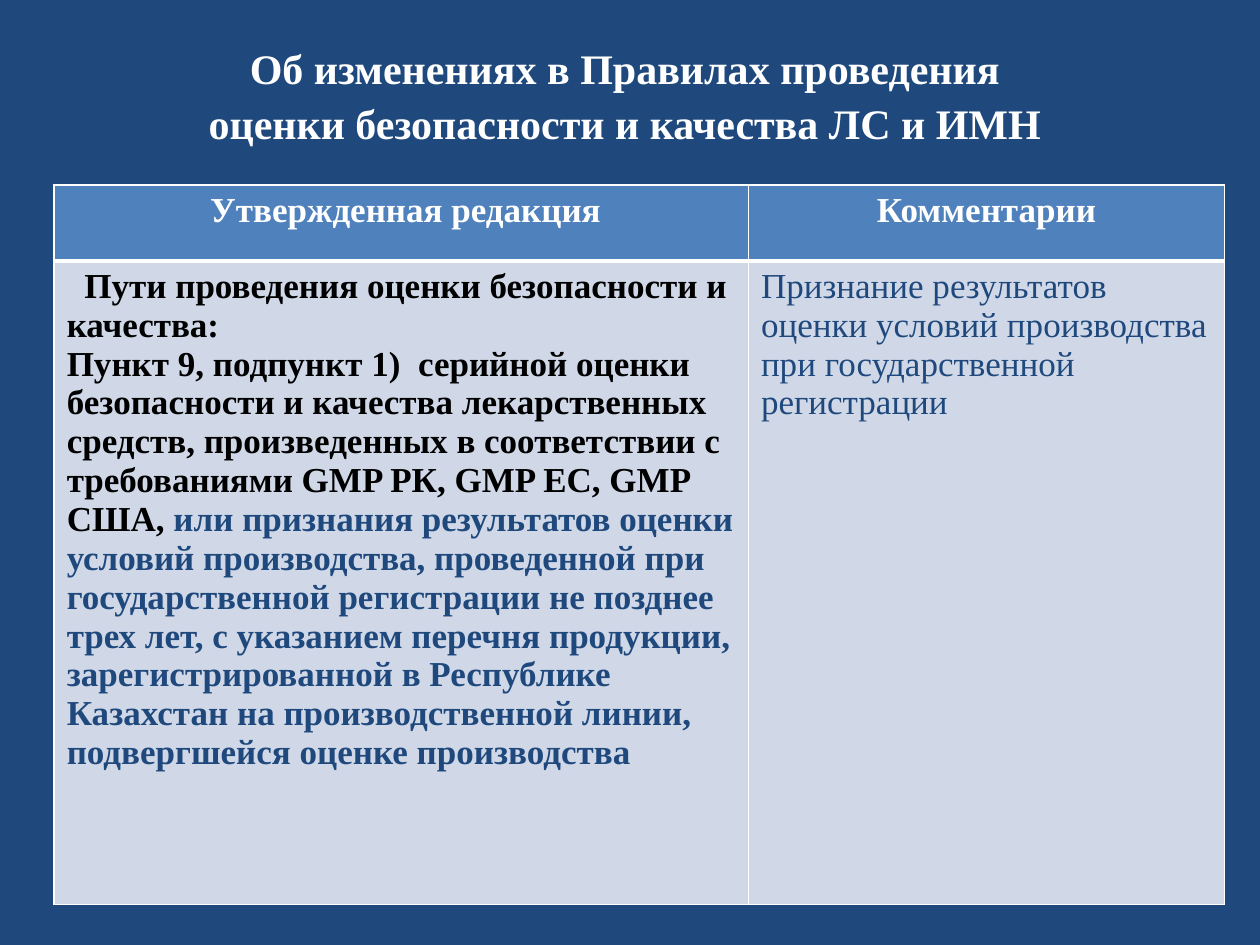
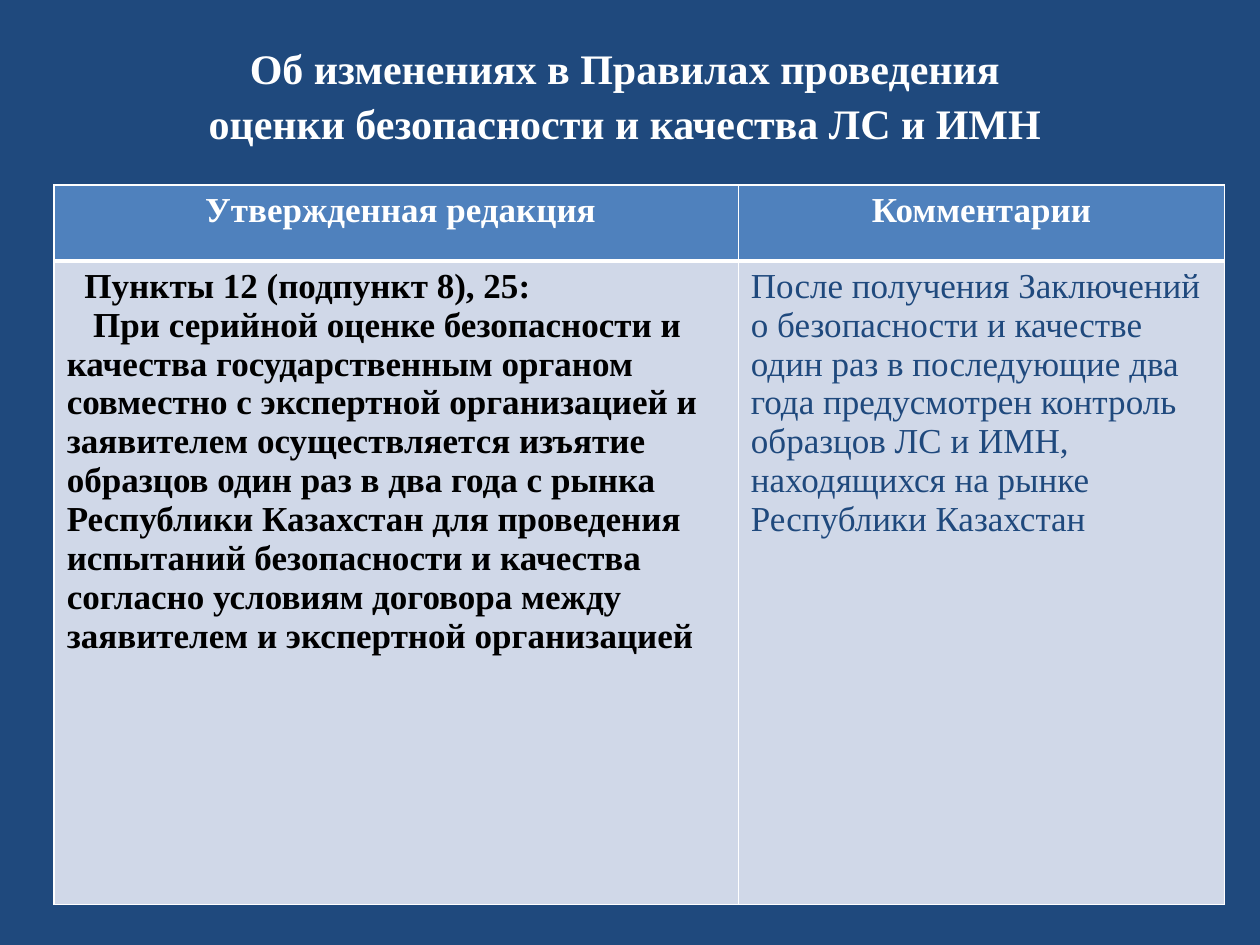
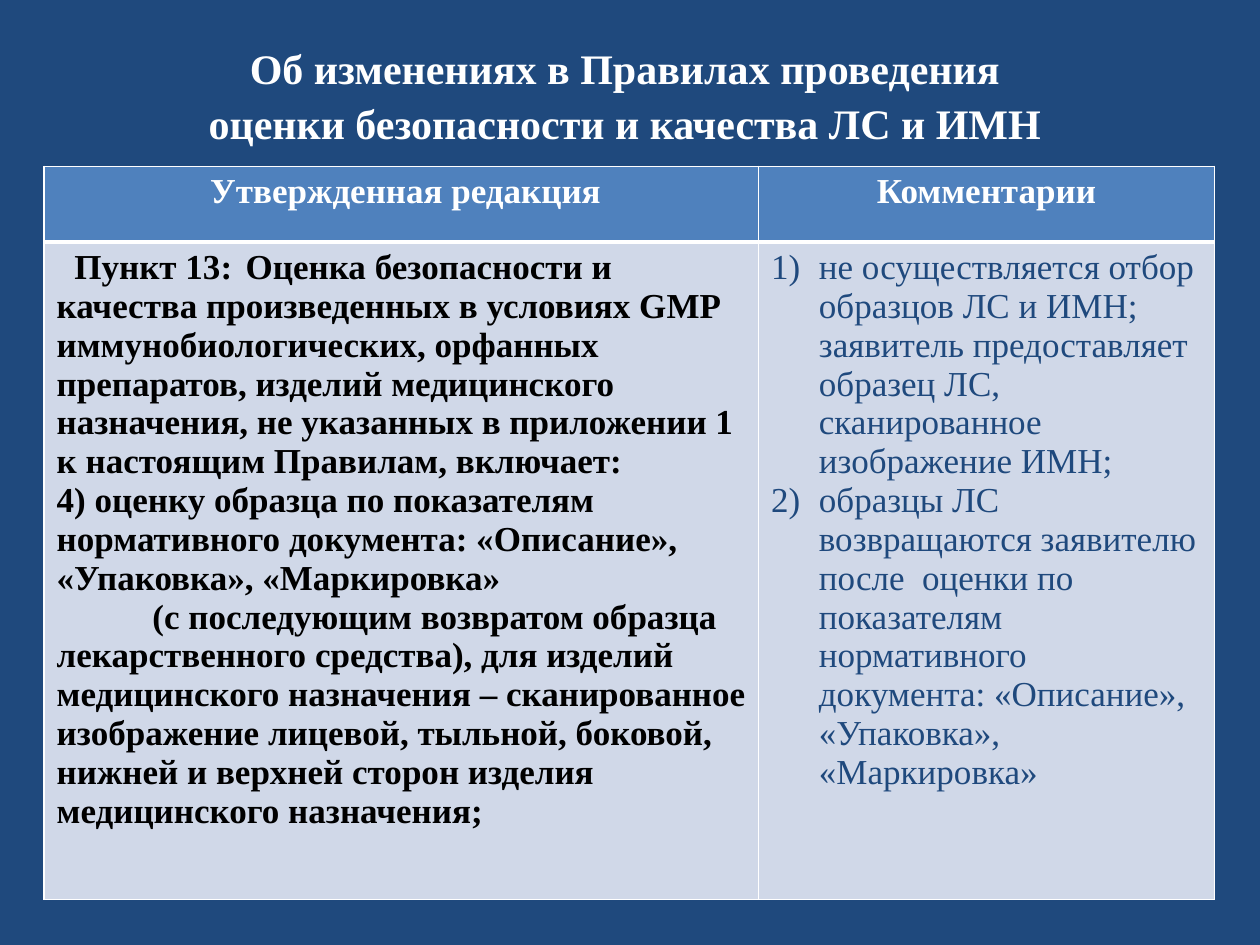
from dataclasses import dataclass

from lxml import etree
from pptx import Presentation
from pptx import util as u
from pptx.dml.color import RGBColor
from pptx.enum import text
from pptx.oxml.ns import qn


@dataclass(frozen=True)
class Theme:
    font: str = "Times New Roman"
    navy: str = "1F497D"
    blue: str = "4F81BD"
    pale: str = "D0D8E8"
    white: str = "FFFFFF"
    black: str = "000000"
    title_size: int = 24
    table_size: int = 20
    thin: int = 1
    thick: int = 3


@dataclass(frozen=True)
class Para:
    text: str
    added: str = ""
    indent: float = 0
    tab: float = 0
    numbered: bool = False


@dataclass(frozen=True)
class Revision:
    box: tuple
    first_col: float
    edition: tuple
    comments: tuple


T = Theme()
TITLE = "Об изменениях в Правилах проведения \nоценки безопасности и качества ЛС и ИМН "
TITLE_BOX = (0.12, 0.29, 9.76, 1.0)
HEADERS = (" Утвержденная редакция", "Комментарии")
HEADER_HEIGHT = 0.6
NUMBER_INDENT = 0.38

REVISIONS = (
    Revision(
        (0.43, 1.47, 9.29, 5.71), 5.51,
        (Para("Пути проведения оценки безопасности и качества:", indent=0.14),
         Para("Пункт 9, подпункт 1)  серийной оценки безопасности и качества "
              "лекарственных средств, произведенных в соответствии с требованиями "
              "GMP РК, GMP ЕС, GMP США, ",
              added="или признания результатов оценки условий производства, "
                    "проведенной при государственной регистрации не позднее трех лет, "
                    "с указанием перечня продукции, зарегистрированной в Республике "
                    "Казахстан на производственной линии, подвергшейся оценке "
                    "производства")),
        (Para("Признание результатов оценки условий производства при "
              "государственной регистрации"),),
    ),
    Revision(
        (0.43, 1.47, 9.29, 5.71), 5.43,
        (Para("Пункты 12 (подпункт 8), 25:", indent=0.14),
         Para("При серийной оценке безопасности и качества государственным органом "
              "совместно с экспертной организацией и заявителем осуществляется "
              "изъятие образцов один раз в два года с рынка Республики Казахстан "
              "для проведения испытаний безопасности и качества согласно условиям "
              "договора между заявителем и экспертной организацией", indent=0.21)),
        (Para("После получения Заключений о безопасности и качестве один раз в "
              "последующие два года предусмотрен контроль образцов ЛС и ИМН, "
              "находящихся на рынке Республики Казахстан"),),
    ),
    Revision(
        (0.35, 1.32, 9.29, 5.82), 5.67,
        (Para("Пункт 13:\tОценка безопасности и качества произведенных в условиях "
              "GMP иммунобиологических, орфанных препаратов, изделий медицинского "
              "назначения, не указанных в приложении 1 к настоящим Правилам, "
              "включает:", indent=0.14, tab=1.67),
         Para("4) оценку образца по показателям нормативного документа: «Описание», "
              "«Упаковка», «Маркировка»"),
         Para("(с последующим возвратом образца лекарственного средства), для "
              "изделий медицинского назначения – сканированное изображение лицевой, "
              "тыльной, боковой, нижней и верхней сторон изделия медицинского "
              "назначения;", indent=0.76)),
        (Para("не осуществляется отбор образцов ЛС и ИМН; заявитель предоставляет "
              "образец ЛС, сканированное изображение ИМН;", numbered=True),
         Para("образцы ЛС возвращаются заявителю после  оценки по показателям "
              "нормативного документа: «Описание», «Упаковка», «Маркировка»",
              numbered=True)),
    ),
)


def rgb(color):
    return RGBColor.from_string(color)


def style_run(r, size, color, bold=True):
    r.font.name = T.font
    r.font.size = u.Pt(size)
    r.font.color.rgb = rgb(color)
    r.font.bold = bold


def set_indent(p, para):
    pPr = p._p.get_or_add_pPr()
    if para.numbered:
        pPr.set("marL", str(u.Inches(NUMBER_INDENT)))
        pPr.set("indent", str(-u.Inches(NUMBER_INDENT)))
        etree.SubElement(pPr, qn("a:buAutoNum"), type="arabicParenR")
    elif para.indent:
        pPr.set("marL", "0")
        pPr.set("indent", str(u.Inches(para.indent)))
    if para.tab:
        tabs = etree.SubElement(pPr, qn("a:tabLst"))
        etree.SubElement(tabs, qn("a:tab"), pos=str(u.Inches(para.tab)), algn="l")


def style_cell(cell, fill, top, bottom):
    tcPr = cell._tc.get_or_add_tcPr()
    widths = {"lnL": T.thin, "lnR": T.thin, "lnT": top, "lnB": bottom}
    for side, width in widths.items():
        ln = etree.SubElement(tcPr, qn(f"a:{side}"), w=str(u.Pt(width)))
        solid = etree.SubElement(ln, qn("a:solidFill"))
        etree.SubElement(solid, qn("a:srgbClr"), val=T.white)
    cell.fill.solid()
    cell.fill.fore_color.rgb = rgb(fill)


def fill_header(cell, label):
    style_cell(cell, T.blue, T.thin, T.thick)
    p = cell.text_frame.paragraphs[0]
    p.text = label
    p.alignment = text.PP_ALIGN.CENTER
    style_run(p.runs[0], T.table_size, T.white)


def fill_body(cell, paras, color, bold):
    style_cell(cell, T.pale, T.thick, T.thin)
    tf = cell.text_frame
    tf.text = "\n".join(para.text for para in paras)
    for p, para in zip(tf.paragraphs, paras):
        set_indent(p, para)
        style_run(p.runs[0], T.table_size, color, bold)
        if para.added:
            r = p.add_run()
            r.text = para.added
            style_run(r, T.table_size, T.navy, bold)


def add_title(s, box):
    sp = s.shapes.title
    sp.left, sp.top, sp.width, sp.height = map(u.Inches, box)
    tf = sp.text_frame
    tf.text = TITLE
    tf.word_wrap = True
    tf.auto_size = text.MSO_AUTO_SIZE.NONE
    tf.vertical_anchor = text.MSO_ANCHOR.TOP
    for p in tf.paragraphs:
        p.alignment = text.PP_ALIGN.CENTER
        p.space_before = u.Pt(2.2)
        style_run(p.runs[0], T.title_size, T.white)


def add_revision_table(s, revision):
    width, height = revision.box[2:]
    tbl = s.shapes.add_table(2, 2, *map(u.Inches, revision.box)).table
    tbl.horz_banding = False
    for col, w in zip(tbl.columns, (revision.first_col, width - revision.first_col)):
        col.width = u.Inches(w)
    for row, h in zip(tbl.rows, (HEADER_HEIGHT, height - HEADER_HEIGHT)):
        row.height = u.Inches(h)
    for i, label in enumerate(HEADERS):
        fill_header(tbl.cell(0, i), label)
    fill_body(tbl.cell(1, 0), revision.edition, T.black, True)
    fill_body(tbl.cell(1, 1), revision.comments, T.navy, False)


def add_revision_slide(prs, revision):
    s = prs.slides.add_slide(prs.slide_layouts.get_by_name("Title Only"))
    add_title(s, TITLE_BOX)
    add_revision_table(s, revision)


def main():
    prs = Presentation()
    prs.slide_width, prs.slide_height = u.Inches(10), u.Inches(7.5)
    bg = prs.slide_master.background.fill
    bg.solid()
    bg.fore_color.rgb = rgb(T.navy)
    for revision in REVISIONS:
        add_revision_slide(prs, revision)
    prs.save("out.pptx")


if __name__ == "__main__":
    main()
